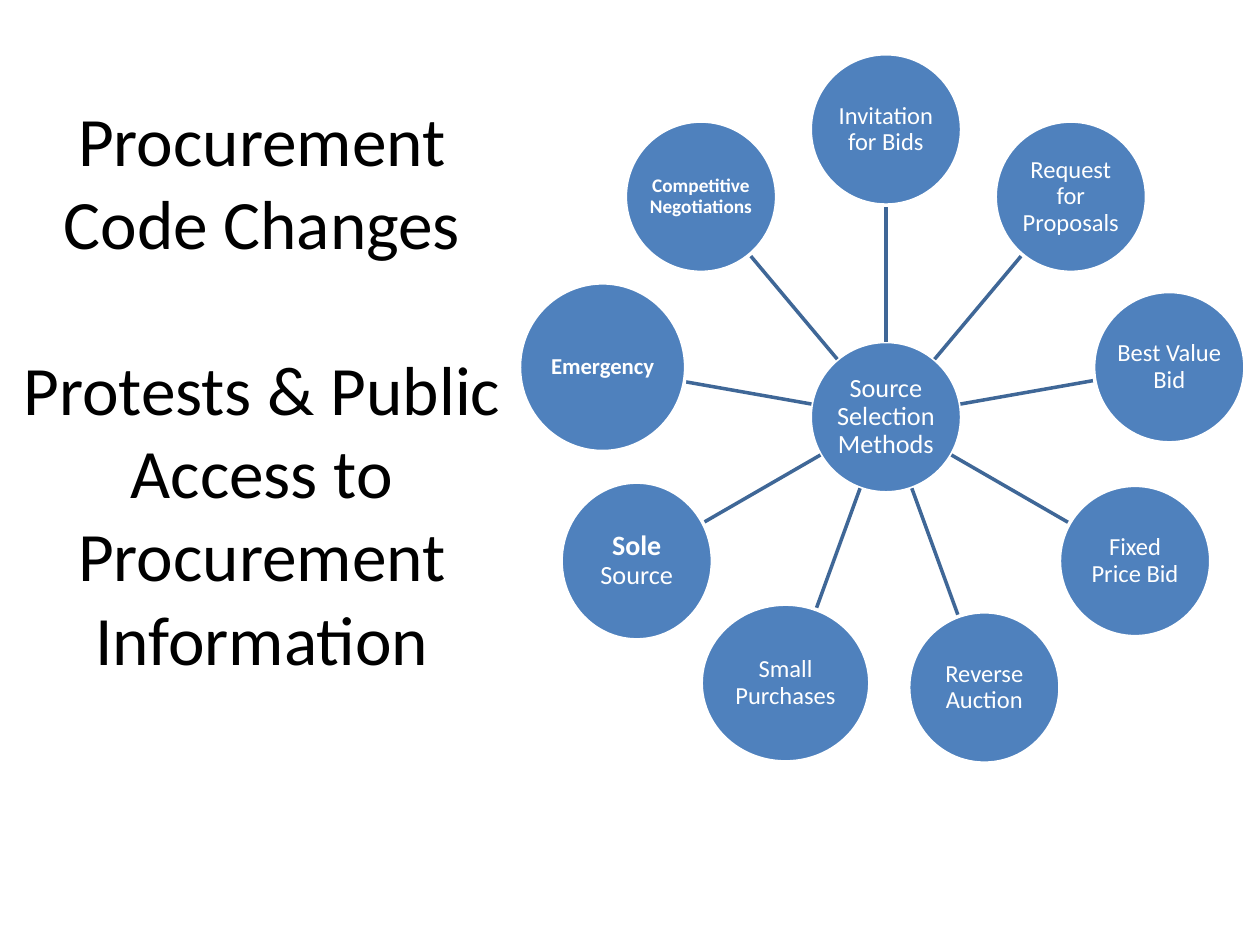
from math import cos, radians, sin

from lxml.etree import SubElement
from pptx import Presentation
from pptx.dml.color import RGBColor
from pptx.enum.shapes import MSO_CONNECTOR as Connector, MSO_SHAPE as Preset
from pptx.enum.text import MSO_ANCHOR as Anchor, MSO_AUTO_SIZE as AutoSize, PP_ALIGN as Align
from pptx.oxml.ns import qn
from pptx.util import Cm, Pt

TITLE = ["Procurement Code Changes",
         "Protests & Public Access to Procurement Information"]

# Each label is a list of (text, size in points, bold).
HUB = [("Source Selection Methods", 15, False)]
DIAMETER = 3.05
# Clockwise from the top: label, width, height, shift from the ring.
METHODS = [
    ([("Invitation for Bids", 14, False)], DIAMETER, DIAMETER, (0, 0)),
    ([("Request for Proposals", 14, False)], DIAMETER, DIAMETER, (0, 0)),
    ([("Best Value Bid", 14, False)], DIAMETER, DIAMETER, (0, 0)),
    ([("Fixed Price Bid", 14, False)], DIAMETER, DIAMETER, (0, 0)),
    ([("Reverse Auction", 14, False)], DIAMETER, DIAMETER, (0, 0)),
    ([("Small Purchases", 14, False)], 3.4, 3.18, (-0.04, -0.09)),
    ([("Sole ", 16, True), ("Source", 15, False)], DIAMETER, 3.18, (0, 0)),
    ([("Emergency", 13, True)], 3.35, 3.4, (0, 0)),
    ([("Competitive Negotiations", 11, True)], DIAMETER, DIAMETER, (0, 0)),
]

FONT = "Calibri"
BLACK = RGBColor(0x00, 0x00, 0x00)
WHITE = RGBColor(0xFF, 0xFF, 0xFF)
BLUE = RGBColor(0x4F, 0x81, 0xBD)
DARK_BLUE = RGBColor(0x3F, 0x67, 0x97)

CENTRE_X, CENTRE_Y = 17.86, 8.41
RING = 5.8
TITLE_LINE = Pt(47.5)


def apply(target, formats):
    for name, value in formats.items():
        setattr(target, name, value)


def set_insets(frame, side, end):
    apply(frame, {"margin_left": Cm(side), "margin_right": Cm(side),
                  "margin_top": Cm(end), "margin_bottom": Cm(end),
                  "word_wrap": True, "vertical_anchor": Anchor.MIDDLE})


def on_ray(angle, distance):
    """Point at a distance from the hub, with the angle clockwise from the top."""
    return (CENTRE_X + distance * sin(angle), CENTRE_Y - distance * cos(angle))


def add_title(slide):
    title = slide.shapes.title
    apply(title, {"left": Cm(0.2), "top": Cm(1.47),
                  "width": Cm(10.16), "height": Cm(12.7)})
    frame = title.text_frame
    set_insets(frame, 0.13, 0.08)
    frame.auto_size = AutoSize.NONE
    frame.text = "\n".join(TITLE)
    for index, paragraph in enumerate(frame.paragraphs):
        apply(paragraph, {"alignment": Align.CENTER, "line_spacing": TITLE_LINE,
                          "space_before": TITLE_LINE if index else Pt(0)})
        for run in paragraph.runs:
            apply(run.font, {"name": FONT, "size": Pt(39.6)})
            run.font.color.rgb = BLACK


def add_circle(slide, label, x, y, width, height):
    circle = slide.shapes.add_shape(Preset.OVAL, Cm(x - width / 2), Cm(y - height / 2),
                                    Cm(width), Cm(height))
    circle.shadow.inherit = False
    circle.fill.solid()
    circle.fill.fore_color.rgb = BLUE
    circle.line.color.rgb = WHITE
    circle.line.width = Pt(2)
    set_insets(circle.text_frame, 0.03, 0.03)
    paragraph = circle.text_frame.paragraphs[0]
    apply(paragraph, {"alignment": Align.CENTER, "line_spacing": 0.9})
    for text, size, bold in label:
        run = paragraph.add_run()
        run.text = text
        apply(run.font, {"name": FONT, "size": Pt(size), "bold": bold})
        run.font.color.rgb = WHITE


def add_spoke(slide, angle, outer_radius):
    start = on_ray(angle, DIAMETER / 2)
    end = on_ray(angle, RING - outer_radius)
    spoke = slide.shapes.add_connector(Connector.STRAIGHT, *map(Cm, start + end))
    spoke.line.color.rgb = DARK_BLUE
    spoke.line.width = Pt(2)
    SubElement(spoke._element.spPr, qn("a:effectLst"))


def main():
    deck = Presentation()
    apply(deck, {"slide_width": Cm(25.4), "slide_height": Cm(19.05)})
    slide = deck.slides.add_slide(deck.slide_layouts[5])
    add_title(slide)
    add_circle(slide, HUB, CENTRE_X, CENTRE_Y, DIAMETER, DIAMETER)
    for index, (label, width, height, (shift_x, shift_y)) in enumerate(METHODS):
        angle = radians(index * 360 / len(METHODS))
        x, y = on_ray(angle, RING)
        add_spoke(slide, angle, (width + height) / 4)
        add_circle(slide, label, x + shift_x, y + shift_y, width, height)
    deck.save("out.pptx")


if __name__ == "__main__":
    main()
